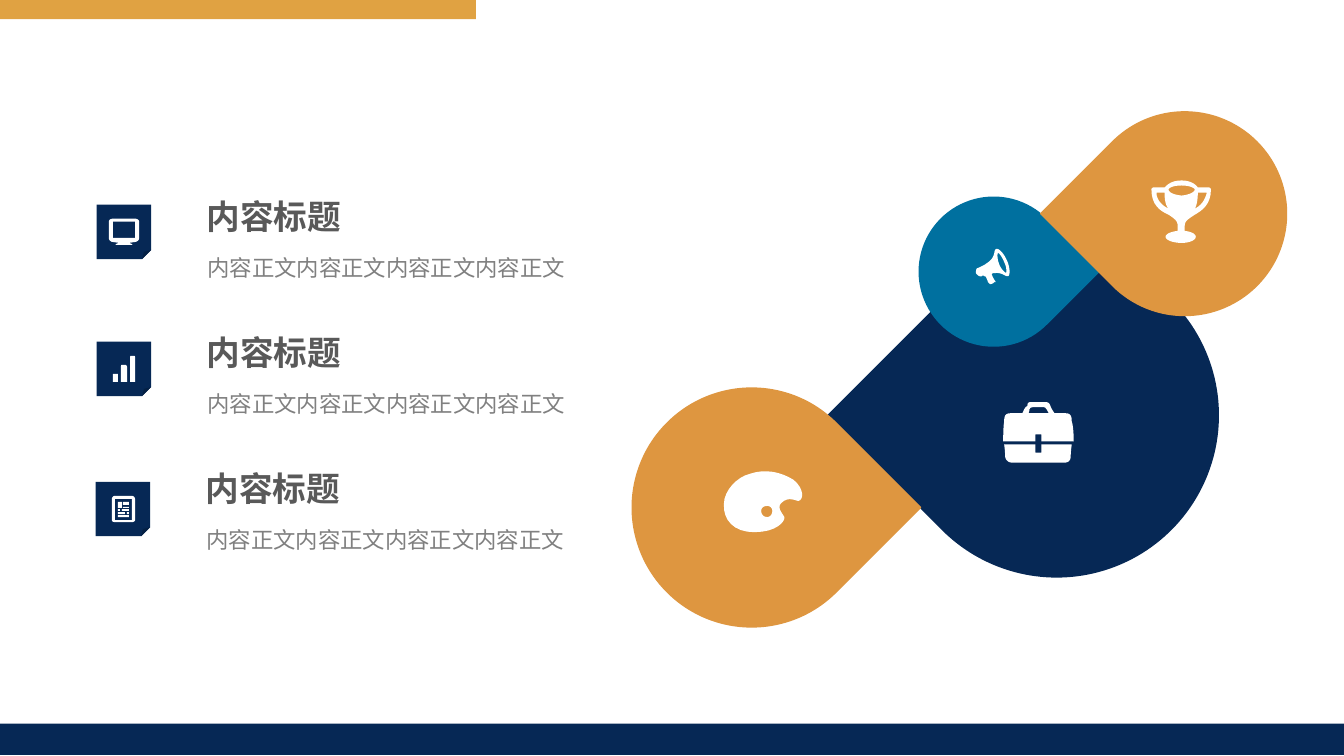
from pptx import Presentation
from pptx.dml.color import RGBColor
from pptx.enum.shapes import MSO_SHAPE as Shape
from pptx.enum.text import MSO_AUTO_SIZE as AutoSize
from pptx.oxml.ns import qn
from pptx.util import Pt
from lxml import etree

PX = 9144  # EMU per px, 100 px to the inch
WIDTH, HEIGHT = 1333, 750
FONT = "Noto Sans CJK SC"
NAVY, ORANGE, TEAL, WHITE = "062855", "DE9640", "00709F", "FFFFFF"
GOLD, DARK_GREY, GREY = "E0A242", "595959", "808080"
CURVE_STEPS = 8

# Icon outlines in px: M starts a contour, L adds corners, C adds cubic curves
BRIEFCASE = """
M 32 32 L 38 32 38 39 70 39 C 70 39 70 24 68 19 68 14 67 11 62 11 L 51 11
C 48 7 47 4 47 4 46 1 45 0 42 0 L 27 0 C 25 0 24 1 24 4 22 4 21 7 19 11
L 7 11 C 2 11 1 14 1 19 0 24 0 39 0 39 L 32 39
M 26 7 C 27 6 27 5 30 5 L 40 5 C 42 5 42 6 43 7 43 7 45 10 45 11
L 25 11 C 26 10 26 7 26 7
M 38 50 L 32 50 32 42 1 42 C 1 42 2 49 2 54 2 56 4 60 9 60
L 61 60 C 66 60 67 56 67 54 67 49 68 42 68 42 L 38 42"""
PALETTE = """
M 70 11 C 57 3 42 0 27 5 14 8 1 22 1 35 0 51 11 63 31 63 54 63 61 52 61 49
62 47 52 39 58 34 65 27 72 32 75 32 80 31 81 20 70 11
M 44 48 C 40 48 38 45 38 42 38 39 40 37 44 37 47 37 49 39 49 42 49 45 47 48 44 48"""
MEGAPHONE = """
M 31 13 C 28 6 23 0 20 1 16 3 23 11 2 20 0 20 0 23 0 25 1 27 4 29 6 28 L 7 27
C 9 29 10 28 10 29 11 31 12 34 12 34 13 35 14 36 14 36 15 36 18 35 18 34
20 34 20 34 19 33 19 32 18 32 18 31 17 30 16 27 16 27 15 26 16 25 18 25
27 24 29 29 32 28 34 27 34 20 31 13
M 30 25 C 30 25 25 22 23 16 21 11 21 5 22 5 23 5 26 9 28 14 31 20 30 24 30 25"""
TROPHY = """
M 33 45 C 33 40 37 38 43 34 50 30 59 24 59 9 59 8 58 7 57 7 L 46 7
C 44 4 39 0 30 0 20 0 16 4 13 7 L 2 7 C 1 7 0 8 0 9 0 24 8 30 17 34
23 38 26 40 26 45 L 26 50 C 19 51 14 53 14 56 14 59 21 62 30 62
38 62 44 59 44 56 44 53 40 51 33 50
M 43 28 C 45 25 46 19 46 12 L 55 12 C 53 20 49 25 43 28
M 30 5 C 39 5 43 8 43 9 43 11 39 14 30 15 20 14 17 11 17 9 17 8 20 5 30 5
M 5 12 L 13 12 C 13 19 14 25 17 28 11 25 5 20 5 12"""
MONITOR = """
M 26 0 L 4 0 C 2 0 0 1 0 3 L 0 19 C 0 21 1 22 3 23 L 10 24 C 10 24 4 26 8 26
L 22 26 C 26 26 20 24 20 24 L 27 23 C 29 22 30 21 30 19 L 30 3 C 30 1 28 0 26 0
M 26 19 L 4 19 4 3 26 3"""
BARS = """
M 21 0 L 18 0 C 17 0 17 1 17 2 L 17 26 22 26 22 2 C 22 1 22 0 21 0
M 12 9 L 9 9 C 8 9 8 10 8 11 L 8 26 14 26 14 11 C 14 10 13 9 12 9
M 4 18 L 1 18 C 0 18 0 18 0 19 L 0 26 5 26 5 19 C 5 18 5 18 4 18"""
NEWS_BLOCKS = [(6, 16, 13, 18), (11, 11, 17, 12), (11, 6, 17, 9), (6, 6, 10, 12),
               (6, 13, 8, 15), (10, 13, 17, 15), (6, 19, 17, 21), (15, 16, 17, 18)]
NEWS = """
M 20 0 L 3 0 C 1 0 0 2 0 3 L 0 24 C 0 25 1 26 3 26
L 20 26 C 22 26 23 25 23 24 L 23 3 C 23 2 22 0 20 0
M 20 24 L 3 24 3 3 20 3""" + "".join(
    f" M {x1} {y1} L {x2} {y1} {x2} {y2} {x1} {y2}" for x1, y1, x2, y2 in NEWS_BLOCKS)


def color(hex_text):
    return RGBColor.from_string(hex_text)


def paint(shape, fill, line=None):
    shape.shadow.inherit = False
    shape.fill.solid()
    shape.fill.fore_color.rgb = color(fill)
    if line:
        shape.line.color.rgb = color(line)
        shape.line.width = Pt(1)
    else:
        shape.line.fill.background()


def add_preset(page, kind, left, top, width, height, fill, line=None, turn=0):
    shape = page.shapes.add_shape(kind, left * PX, top * PX, width * PX, height * PX)
    shape.rotation = turn
    paint(shape, fill, line)


def curve_points(start, first, second, end):
    for step in range(1, CURVE_STEPS + 1):
        t = step / CURVE_STEPS
        weights = ((1 - t) ** 3, 3 * t * (1 - t) ** 2, 3 * t * t * (1 - t), t ** 3)
        yield tuple(sum(weight * point[axis] for weight, point
                        in zip(weights, (start, first, second, end))) for axis in (0, 1))


def outline_points(contour):
    """Turn one contour into a list of corner points."""
    points, mode, pending = [], "L", []
    numbers = iter(contour.split())
    for token in numbers:
        if token in "LC":
            mode = token
            continue
        pending.append((int(token), int(next(numbers))))
        if mode == "L":
            points += pending
            pending = []
        elif len(pending) == 3:
            points += curve_points(points[-1], *pending)
            pending = []
    return points


def add_icon(page, left, top, outline):
    builder = None
    for contour in outline.split("M")[1:]:
        points = [((left + x) * PX, (top + y) * PX) for x, y in outline_points(contour)]
        if builder is None:
            builder = page.shapes.build_freeform(*points[0])
        else:
            builder.move_to(*points[0])
        builder.add_line_segments(points[1:], close=True)
    paint(builder.convert_to_shape(), WHITE)


def add_text(page, text, left, top, width, height, size, ink, bold=False, spacing=None):
    box = page.shapes.add_textbox(left * PX, top * PX, width * PX, height * PX)
    frame = box.text_frame
    frame.word_wrap = True
    frame.auto_size = AutoSize.SHAPE_TO_FIT_TEXT
    para = frame.paragraphs[0]
    if spacing:
        para.line_spacing = spacing
    span = para.add_run()
    span.text = text
    span.font.name, span.font.size, span.font.bold = FONT, Pt(size), bold
    span.font.color.rgb = color(ink)
    # East Asian typeface
    etree.SubElement(span.font._element, qn("a:ea")).set("typeface", FONT)


def add_bands(page):
    add_preset(page, Shape.RECTANGLE, 0, 0, 472, 19, GOLD)
    add_preset(page, Shape.RECTANGLE, 0, 718, WIDTH, 31, NAVY)


def add_item(page, left, top, tile_drop, icon, icon_inset):
    """Icon tile with a heading and a line of body text to its right."""
    tile_top = top + tile_drop
    add_preset(page, Shape.FOLDED_CORNER, left, tile_top, 54, 54, NAVY)
    add_icon(page, left + icon_inset, tile_top + 14, icon)
    add_text(page, "内容标题", left + 99, top, 172, 50, 24, DARK_GREY, bold=True)
    add_text(page, "内容正文内容正文内容正文内容正文", left + 100, top + 45, 381, 46,
             16, GREY, spacing=1.5)


def add_drop(page, left, top, size, turn, fill, line, icon, icon_left, icon_top):
    """Teardrop with an icon placed inside it."""
    add_preset(page, Shape.TEAR, left, top, size, size, fill, line, turn)
    add_icon(page, left + icon_left, top + icon_top, icon)


def main():
    deck = Presentation()
    deck.slide_width, deck.slide_height = WIDTH * PX, HEIGHT * PX
    page = deck.slides.add_slide(deck.slide_layouts[6])

    # Drop chain: a turn of 45 points right, 225 points left
    add_drop(page, 887, 251, 322, 225, NAVY, None, BRIEFCASE, 108, 148)
    add_drop(page, 627, 385, 237, 45, ORANGE, ORANGE, PALETTE, 90, 80)
    add_drop(page, 911, 195, 149, 45, TEAL, None, MEGAPHONE, 57, 51)
    add_drop(page, 1074, 111, 202, 225, ORANGE, ORANGE, TROPHY, 68, 68)

    # Item list
    items = [(96, 14, MONITOR, 12), (96, 15, BARS, 16), (95, 19, NEWS, 16)]
    for index, (left, tile_drop, icon, icon_inset) in enumerate(items):
        add_item(page, left, 189 + 135 * index, tile_drop, icon, icon_inset)

    add_bands(page)
    deck.save("out.pptx")


if __name__ == "__main__":
    main()
